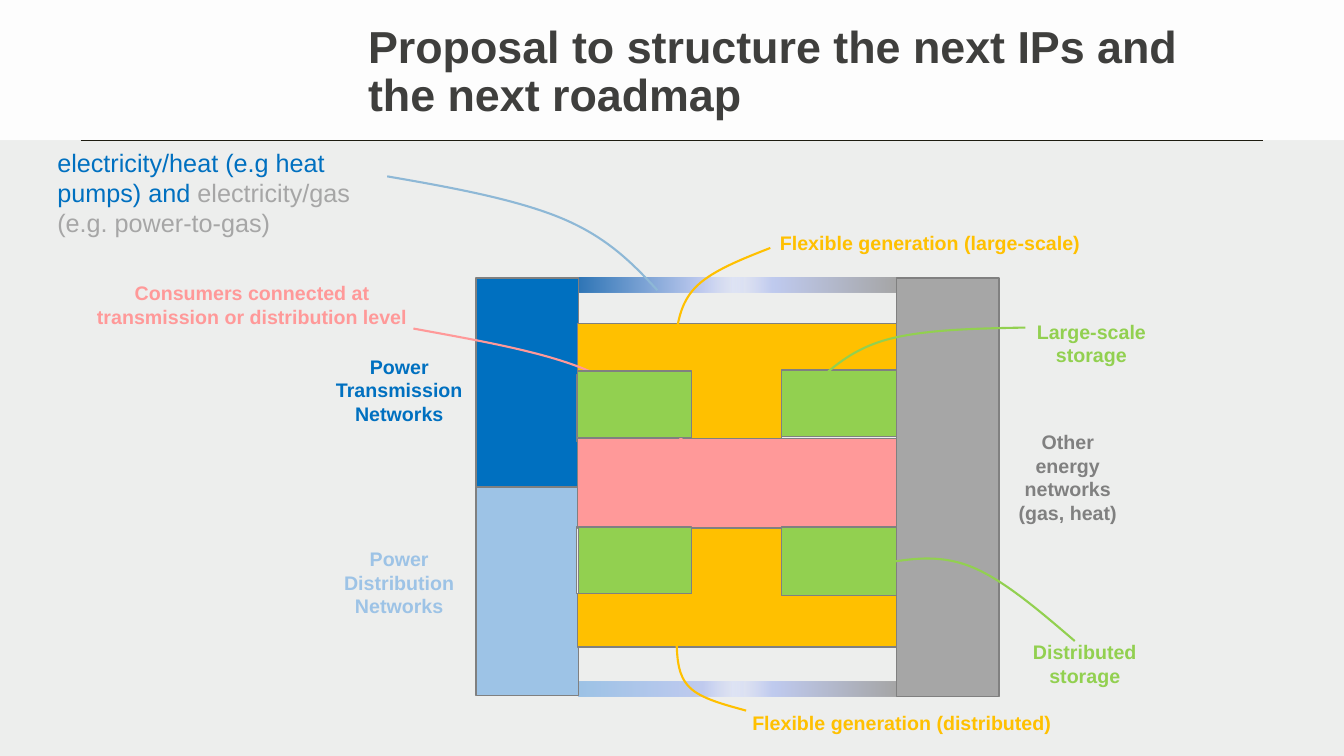
"""Build the slide proposing a structure for the next IPs and roadmap."""
from copy import deepcopy
from dataclasses import dataclass
from typing import Optional

from lxml.etree import SubElement
from pptx import Presentation
from pptx.dml.color import RGBColor
from pptx.enum.shapes import MSO_CONNECTOR, MSO_SHAPE
from pptx.enum.text import MSO_ANCHOR, MSO_AUTO_SIZE, PP_ALIGN
from pptx.oxml.ns import qn
from pptx.shapes.autoshape import Shape
from pptx.slide import Slide
from pptx.text.text import _Paragraph
from pptx.util import Inches, Pt

Box = tuple[float, float, float, float]
Point = tuple[float, float]


@dataclass(frozen=True)
class Theme:
    font: str = "Arial"
    title_size: int = 32
    note_size: int = 18
    label_size: int = 14
    background: str = "EDEEED"
    white: str = "FFFFFF"
    title: str = "3F3F3D"
    rule: str = "1E1C11"
    outline: str = "808080"
    transmission: str = "0070C0"
    distribution: str = "9DC3E6"
    other: str = "A6A6A6"
    heat: str = "2E75B6"
    blend: str = "C0CBF0"
    pale: str = "E0E5F7"
    generation: str = "FFC000"
    consumers: str = "FF9999"
    storage: str = "92D050"
    coupling: str = "8EB8D6"


THEME = Theme()


@dataclass(frozen=True)
class Block:
    box: Box
    color: str
    outline: Optional[str] = THEME.outline
    opacity: int = 100


@dataclass(frozen=True)
class Coupling:
    box: Box
    color: str
    angle: int


@dataclass(frozen=True)
class Label:
    box: Box
    runs: tuple[tuple[str, str], ...]
    size: int = THEME.label_size
    bold: bool = True
    align: PP_ALIGN = PP_ALIGN.CENTER


@dataclass(frozen=True)
class Leader:
    points: tuple[Point, ...]
    color: str


def rgb(color: str) -> RGBColor:
    """Turn a hex string into a colour."""
    return RGBColor.from_string(color)


def add_rectangle(slide: Slide, box: Box) -> Shape:
    """Add a rectangle without shadow or outline."""
    rectangle = slide.shapes.add_shape(MSO_SHAPE.RECTANGLE, *map(Inches, box))
    rectangle.shadow.inherit = False
    rectangle.line.fill.background()
    return rectangle


def draw_block(slide: Slide, block: Block) -> Shape:
    """Draw a solid rectangle."""
    rectangle = add_rectangle(slide, block.box)
    rectangle.fill.solid()
    rectangle.fill.fore_color.rgb = rgb(block.color)
    if block.opacity < 100:
        color = rectangle._element.spPr.find(qn("a:solidFill"))[0]
        SubElement(color, qn("a:alpha"), val=str(block.opacity * 1000))
    if block.outline:
        rectangle.line.color.rgb = rgb(block.outline)
        rectangle.line.width = Pt(1)
    return rectangle


def draw_coupling(slide: Slide, coupling: Coupling) -> None:
    """Draw a strip fading from its network colour towards the centre."""
    rectangle = add_rectangle(slide, coupling.box)
    rectangle.fill.gradient()
    gradient = rectangle._element.spPr.find(qn("a:gradFill"))
    stops = gradient.find(qn("a:gsLst"))
    for stop in list(stops):
        stops.remove(stop)
    for position, color, opacity in (
        (0, coupling.color, 100), (75, THEME.blend, 100), (100, THEME.pale, 50)
    ):
        stop = SubElement(stops, qn("a:gs"), pos=str(position * 1000))
        value = SubElement(stop, qn("a:srgbClr"), val=color)
        SubElement(value, qn("a:alpha"), val=str(opacity * 1000))
    gradient.find(qn("a:lin")).set("ang", str(coupling.angle * 60000))


def format_runs(paragraph: _Paragraph, colors: list[str], size: int, bold: bool) -> None:
    """Format each run, and give line breaks the same format."""
    for run, color in zip(paragraph.runs, colors):
        for name, value in {"name": THEME.font, "size": Pt(size), "bold": bold}.items():
            setattr(run.font, name, value)
        run.font.color.rgb = rgb(color)
    for line_break in paragraph._p.findall(qn("a:br")):
        line_break.append(deepcopy(paragraph.runs[0]._r.rPr))


def draw_label(slide: Slide, label: Label) -> None:
    """Draw a wrapped text label."""
    frame = slide.shapes.add_textbox(*map(Inches, label.box)).text_frame
    for name, value in {"word_wrap": True, "auto_size": MSO_AUTO_SIZE.SHAPE_TO_FIT_TEXT}.items():
        setattr(frame, name, value)
    paragraph = frame.paragraphs[0]
    paragraph.alignment = label.align
    colors = []
    for text, color in label.runs:
        for index, line in enumerate(text.split("\n")):
            if index:
                paragraph.add_line_break()
            paragraph.add_run().text = line
            colors.append(color)
    format_runs(paragraph, colors, label.size, label.bold)


def draw_leader(slide: Slide, leader: Leader) -> None:
    """Draw a curve made of cubic segments."""
    start, *rest = [(Inches(x), Inches(y)) for x, y in leader.points]
    builder = slide.shapes.build_freeform(*start)
    builder.add_line_segments(rest, close=False)
    curve = builder.convert_to_shape()
    outline = curve._element.find(".//" + qn("a:path"))
    segments = outline.findall(qn("a:lnTo"))
    for first in range(0, len(segments), 3):
        cubic = SubElement(outline, qn("a:cubicBezTo"))
        for segment in segments[first:first + 3]:
            cubic.append(segment[0])
            outline.remove(segment)
    curve.shadow.inherit = False
    curve.fill.background()
    curve.line.color.rgb = rgb(leader.color)
    curve.line.width = Pt(1.5)


def draw_heading(slide: Slide) -> None:
    """Draw the header band, its rule and the title."""
    title = slide.shapes.title
    band = draw_block(slide, Block((0, 0, 13.33, 1.39), THEME.white, None, 90))
    rule = slide.shapes.add_connector(
        MSO_CONNECTOR.STRAIGHT, Inches(0.8), Inches(1.39), Inches(12.53), Inches(1.39))
    rule.line.color.rgb = rgb(THEME.rule)
    rule.line.width = Pt(0.5)
    SubElement(rule._element.spPr, qn("a:effectLst"))
    for backdrop in (band, rule):
        title._element.addprevious(backdrop._element)
    for name, value in zip(("left", "top", "width", "height"), (3.55, 0.2, 8.94, 1.05)):
        setattr(title, name, Inches(value))
    title.text = "Proposal to structure the next IPs and the next roadmap"
    frame = title.text_frame
    for name, value in {"word_wrap": True, "auto_size": MSO_AUTO_SIZE.NONE,
                        "vertical_anchor": MSO_ANCHOR.MIDDLE}.items():
        setattr(frame, name, value)
    paragraph = frame.paragraphs[0]
    for name, value in {"alignment": PP_ALIGN.LEFT, "line_spacing": 0.9}.items():
        setattr(paragraph, name, value)
    format_runs(paragraph, [THEME.title], THEME.title_size, True)


T = THEME
DIAGRAM = (
    Label((0.47, 1.41, 3.33, 1.01), (("electricity/heat (e.g heat pumps) and ", T.transmission),
          ("electricity/gas (e.g. power-to-gas)", T.other)), T.note_size, False, PP_ALIGN.LEFT),
    *(Coupling((left, top, 1.63, 0.15), color, angle)
      for top, network in ((2.75, T.heat), (6.76, T.distribution))
      for left, color, angle in ((5.74, network, 0), (7.26, T.other, 180))),
    Label((3.1, 3.47, 1.72, 0.81), (("Power Transmission Networks", T.transmission),)),
    Label((3.21, 5.38, 1.5, 0.81), (("Power Distribution Networks", T.distribution),)),
    Label((10, 4.22, 1.18, 1.04), (("Other energy networks\n(gas, heat)", T.outline),)),
    Block((8.89, 2.76, 1.02, 4.15), T.other),
    Block((4.72, 2.76, 1.02, 2.07), T.transmission),
    Block((4.72, 4.83, 1.02, 2.07), T.distribution),
    *(Block((5.73, top, 3.16, 1.18), T.generation) for top in (3.21, 5.24)),
    Label((7.55, 2.24, 3.35, 0.34), (("Flexible generation (large-scale)", T.generation),)),
    Label((7.09, 7, 3.71, 0.34), (("Flexible generation (distributed)", T.generation),)),
    Leader(((6.71, 6.38), (6.72, 6.54), (6.72, 6.7), (6.84, 6.82),
            (6.95, 6.93), (7.18, 6.99), (7.4, 7.05)), T.generation),
    Leader(((6.7, 3.35), (6.73, 3.16), (6.76, 2.98), (6.92, 2.83),
            (7.08, 2.68), (7.36, 2.57), (7.64, 2.46)), T.generation),
    *(Block((left, top, 1.14, 0.66), T.background) for top in (3.72, 5.23) for left in (5.72, 7.75)),
    Label((0.69, 2.74, 3.62, 0.57),
          (("Consumers connected at transmission or distribution level", T.consumers),)),
    Block((5.73, 4.35, 3.16, 0.89), T.consumers),
    Leader(((6.79, 4.39), (6.54, 4.13), (6.29, 3.87), (5.84, 3.68),
            (5.4, 3.49), (4.75, 3.38), (4.1, 3.26)), T.consumers),
    *(Block(box, T.storage) for box in ((5.73, 3.68, 1.13, 0.66), (7.75, 3.67, 1.14, 0.66),
                                        (5.74, 5.23, 1.12, 0.66), (7.75, 5.23, 1.14, 0.68))),
    Label((10.13, 6.3, 1.26, 0.57), (("Distributed storage", T.storage),)),
    Label((10.14, 3.12, 1.37, 0.57), (("Large-scale storage", T.storage),)),
    Leader(((7.98, 3.91), (8.19, 3.7), (8.4, 3.49), (8.76, 3.38),
            (9.13, 3.27), (9.65, 3.26), (10.17, 3.25)), T.storage),
    Leader(((8.81, 5.58), (9.07, 5.54), (9.34, 5.5), (9.65, 5.63),
            (9.96, 5.76), (10.31, 6.06), (10.66, 6.36)), T.storage),
    Leader(((6.52, 2.88), (6.28, 2.62), (6.03, 2.36), (5.58, 2.17),
            (5.13, 1.98), (4.48, 1.86), (3.84, 1.75)), T.coupling),
)
PAINTERS = {Block: draw_block, Coupling: draw_coupling, Label: draw_label, Leader: draw_leader}


def main() -> None:
    """Build and save the presentation."""
    presentation = Presentation()
    presentation.slide_width, presentation.slide_height = Inches(13.33), Inches(7.5)
    slide = presentation.slides.add_slide(presentation.slide_layouts[5])
    slide.background.fill.solid()
    slide.background.fill.fore_color.rgb = rgb(THEME.background)
    draw_heading(slide)
    for part in DIAGRAM:
        PAINTERS[type(part)](slide, part)
    presentation.save("out.pptx")


if __name__ == "__main__":
    main()
